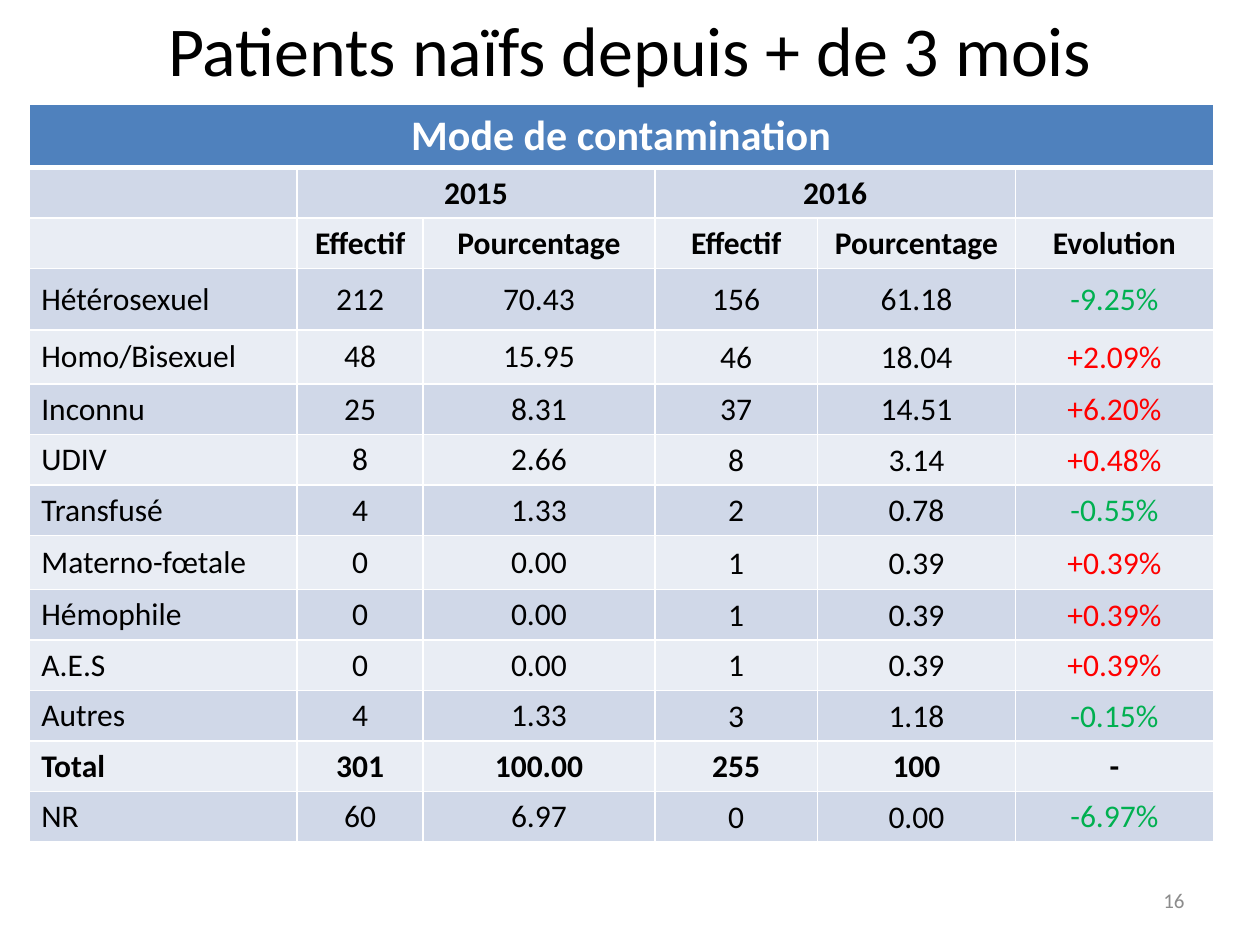
from lxml import etree
from pptx import Presentation
from pptx import util as u
from pptx.dml import color
from pptx.enum import text
from pptx.oxml import ns

FONT = "Calibri"
COLORS = {
    "header": "4F81BD", "dark_band": "D0D8E8", "light_band": "E9EDF4",
    "white": "FFFFFF", "black": "000000", "grey": "8C8C8C",
    "rise": "FF0000", "fall": "00B050",
}
LEFT, CENTER, RIGHT = text.PP_ALIGN.LEFT, text.PP_ALIGN.CENTER, text.PP_ALIGN.RIGHT


def write(frame, wording, size, hue, align, bold=False):
    paragraph = frame.paragraphs[0]
    paragraph.alignment = align
    run = paragraph.add_run()
    run.text = wording
    run.font.name = FONT
    run.font.size = u.Pt(size)
    run.font.bold = bold
    run.font.color.rgb = color.RGBColor.from_string(COLORS[hue])


def add_borders(cell, bottom_width):
    properties = cell._tc.get_or_add_tcPr()
    for i, side in enumerate(("lnL", "lnR", "lnT", "lnB")):
        width = bottom_width if side == "lnB" else 1
        line = etree.Element(ns.qn(f"a:{side}"), w=str(u.Pt(width)))
        fill = etree.SubElement(line, ns.qn("a:solidFill"))
        etree.SubElement(fill, ns.qn("a:srgbClr"), val=COLORS["white"])
        properties.insert(i, line)


presentation = Presentation()
presentation.slide_width = u.Cm(25.4)
presentation.slide_height = u.Cm(19.05)
slide = presentation.slides.add_slide(presentation.slide_layouts[6])

# Page number
page_number = slide.shapes.add_textbox(u.Cm(18.2), u.Cm(17.65), u.Cm(5.93), u.Cm(1.01)).text_frame
page_number.word_wrap = True
page_number.vertical_anchor = text.MSO_ANCHOR.MIDDLE
write(page_number, "16", 12, "grey", RIGHT)

# Title
title = slide.shapes.add_textbox(0, 0, u.Cm(25.4), u.Cm(1.96)).text_frame
title.word_wrap = True
title.auto_size = text.MSO_AUTO_SIZE.SHAPE_TO_FIT_TEXT
write(title, "Patients naïfs depuis + de 3 mois", 40, "black", CENTER)

# Table content: three heading rows, then one row per mode
HEADING_ROWS = 3
rows = [
    ("Mode de contamination", "", "", "", "", ""),
    ("", "2015", "", "2016", "", ""),
    ("", "Effectif", "Pourcentage", "Effectif", "Pourcentage", "Evolution"),
    ("Hétérosexuel", "212", "70.43", "156", "61.18", "-9.25%"),
    ("Homo/Bisexuel", "48", "15.95", "46", "18.04", "+2.09%"),
    ("Inconnu", "25", "8.31", "37", "14.51", "+6.20%"),
    ("UDIV", "8", "2.66", "8", "3.14", "+0.48%"),
    ("Transfusé", "4", "1.33", "2", "0.78", "-0.55%"),
    ("Materno-fœtale", "0", "0.00", "1", "0.39", "+0.39%"),
    ("Hémophile", "0", "0.00", "1", "0.39", "+0.39%"),
    ("A.E.S", "0", "0.00", "1", "0.39", "+0.39%"),
    ("Autres", "4", "1.33", "3", "1.18", "-0.15%"),
    ("Total", "301", "100.00", "255", "100", "-"),
    ("NR", "60", "6.97", "0", "0.00", "-6.97%"),
]
column_widths = [5.41, 2.54, 4.67, 3.28, 3.99, 3.99]
row_heights = [0.99] * len(rows)
row_heights[0], row_heights[3] = 1.22, 1.24
row_heights[4] = row_heights[8] = 1.09

# Table grid
modes = slide.shapes.add_table(
    len(rows), len(column_widths), u.Cm(0.58), u.Cm(2.11),
    u.Cm(sum(column_widths)), u.Cm(sum(row_heights))).table
for column, width in zip(modes.columns, column_widths):
    column.width = u.Cm(width)
for row, height in zip(modes.rows, row_heights):
    row.height = u.Cm(height)
for r, first, last in ((0, 0, 5), (1, 1, 2), (1, 3, 4)):
    modes.cell(r, first).merge(modes.cell(r, last))

# Table cells
for r, entries in enumerate(rows):
    band = "header" if r == 0 else "dark_band" if r % 2 else "light_band"
    is_heading = r < HEADING_ROWS
    is_bold = is_heading or entries[0] == "Total"
    for c, entry in enumerate(entries):
        cell = modes.cell(r, c)
        cell.fill.solid()
        cell.fill.fore_color.rgb = color.RGBColor.from_string(COLORS[band])
        add_borders(cell, 3 if r == 0 else 1)
        if not is_heading:
            cell.vertical_anchor = text.MSO_ANCHOR.MIDDLE
            if c in (3, 4) or (c == 5 and entries[0] not in ("Total", "NR")):
                cell.margin_left = cell.margin_right = cell.margin_top = u.Cm(0.03)
                cell.margin_bottom = 0
        if not entry:
            continue
        hue = "white" if r == 0 else "black"
        if entry.endswith("%"):
            hue = "rise" if entry.startswith("+") else "fall"
        align = LEFT if c == 0 and not is_heading else CENTER
        write(cell.text_frame, entry, 24 if r == 0 else 18, hue, align, is_bold)

presentation.save("out.pptx")
